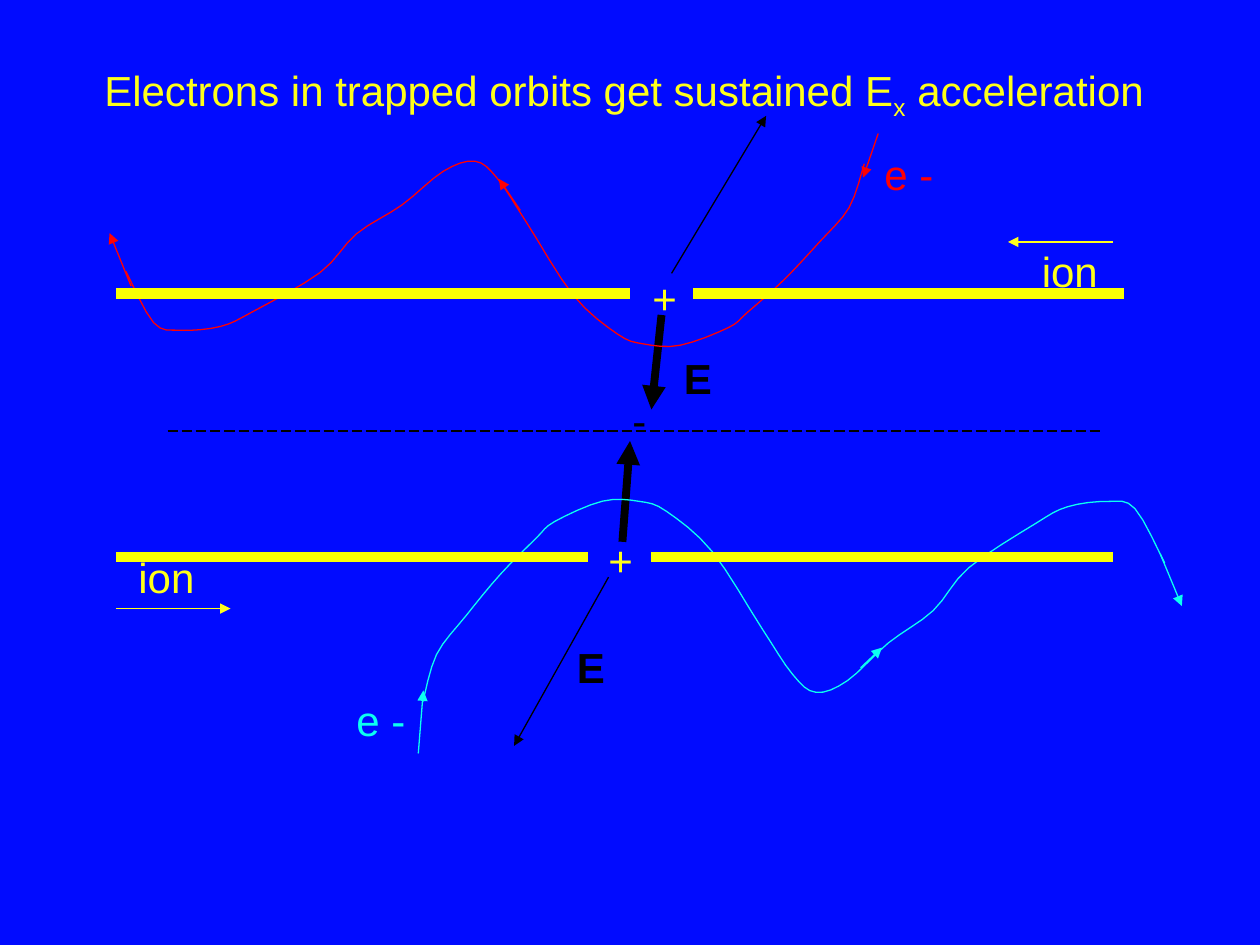
import dataclasses

import lxml.etree
import pptx
import pptx.dml.color
import pptx.enum.dml
import pptx.enum.shapes
import pptx.enum.text
import pptx.oxml.ns
import pptx.util

Inches = pptx.util.Inches
Pt = pptx.util.Pt


@dataclasses.dataclass(frozen=True)
class Theme:
    background: str = "010BFF"
    label: str = "FFFF1A"
    sheet: str = "F9FF04"
    field: str = "000000"
    upper_electron: str = "FF0003"
    lower_electron: str = "0CFFF0"
    font: str = "Arial"
    text_size: float = 24
    thin: float = 0.75
    field_width: float = 4.5
    sheet_width: float = 6


THEME = Theme()

ORBIT = [
    (6.86, 1.3), (6.74, 1.65), (6.5, 1.93), (6.22, 2.23), (5.93, 2.49), (5.78, 2.61),
    (5.4, 2.75), (5.11, 2.74), (4.9, 2.66), (4.55, 2.35), (4.18, 1.77), (3.95, 1.42),
    (3.77, 1.28), (3.52, 1.36), (3.19, 1.63), (2.83, 1.86), (2.54, 2.17), (2.01, 2.48),
    (1.75, 2.6), (1.43, 2.63), (1.22, 2.57), (1, 2.16),
]


def rgb(color):
    return pptx.dml.color.RGBColor.from_string(color)


def apply_format(target, values):
    for name, value in values.items():
        setattr(target, name, value)


def smooth_curve(knots, steps=4):
    padded = [knots[0], *knots, knots[-1]]
    for before, start, end, after in zip(padded, padded[1:], padded[2:], padded[3:]):
        for step in range(1, steps + 1):
            t = step / steps
            yield tuple(
                Inches(b + t / 2 * (c - a + t * (2 * a - 5 * b + 4 * c - d
                                                 + t * (3 * (b - c) + d - a))))
                for a, b, c, d in zip(before, start, end, after))


def add_orbit(slide, color, box, rotation=0):
    start_x, start_y = ORBIT[0]
    builder = slide.shapes.build_freeform(Inches(start_x), Inches(start_y))
    builder.add_line_segments(list(smooth_curve(ORBIT)), close=False)
    orbit = builder.convert_to_shape()
    orbit.shadow.inherit = False
    orbit.fill.background()
    orbit.line.color.rgb = rgb(color)
    orbit.line.width = Pt(THEME.thin)
    left, top, width, height = map(Inches, box)
    apply_format(orbit, {"left": left, "top": top, "width": width, "height": height,
                         "rotation": rotation})


def add_line(slide, start, end, color, width=THEME.thin, dash=None):
    line = slide.shapes.add_connector(
        pptx.enum.shapes.MSO_CONNECTOR.STRAIGHT, *map(Inches, start + end))
    line.line.color.rgb = rgb(color)
    apply_format(line.line, {"width": Pt(width), "dash_style": dash})
    lxml.etree.SubElement(line._element.spPr, pptx.oxml.ns.qn("a:effectLst"))
    return line


def add_arrow(slide, start, end, color, width=THEME.thin):
    arrow = add_line(slide, start, end, color, width)
    head = lxml.etree.SubElement(arrow.line._get_or_add_ln(), pptx.oxml.ns.qn("a:tailEnd"))
    head.set("type", "triangle")


def add_label(slide, text, left, top, width, color, bold=False, subscript="", rest=""):
    label = slide.shapes.add_textbox(*map(Inches, (left, top, width, 0.5)))
    apply_format(label.text_frame, {
        "word_wrap": False,
        "auto_size": pptx.enum.text.MSO_AUTO_SIZE.SHAPE_TO_FIT_TEXT,
    })
    paragraph = label.text_frame.paragraphs[0]
    for part, baseline in ((text, 0), (subscript, -25000), (rest, 0)):
        if not part:
            continue
        run = paragraph.add_run()
        run.text = part
        apply_format(run.font, {"name": THEME.font, "size": Pt(THEME.text_size), "bold": bold})
        run.font.color.rgb = rgb(color)
        if baseline:
            run._r.get_or_add_rPr().set("baseline", str(baseline))


def add_field(slide):
    for start, end, width in (
        ((4.83, 4.58), (4.08, 5.92), THEME.thin),
        ((5.33, 2.17), (6.08, 0.92), THEME.thin),
        ((5.25, 2.5), (5.17, 3.25), THEME.field_width),
        ((4.94, 4.3), (5, 3.5), THEME.field_width),
    ):
        add_arrow(slide, start, end, THEME.field, width)
    add_label(slide, "+", 5.08, 2.11, 0.4, THEME.label)
    add_label(slide, "-", 4.92, 3.08, 0.31, THEME.field)
    add_label(slide, "+", 4.73, 4.19, 0.4, THEME.label)
    for left, top in ((5.33, 2.75), (4.48, 5.04)):
        add_label(slide, "E", left, top, 0.42, THEME.field, bold=True)


def add_sheets(slide):
    add_line(slide, (1.33, 3.42), (8.75, 3.42), THEME.field,
             dash=pptx.enum.dml.MSO_LINE.LONG_DASH)
    for left, right, height in ((0.92, 4.67, 4.42), (5.17, 8.83, 4.42),
                                (0.92, 5, 2.33), (5.5, 8.92, 2.33)):
        add_line(slide, (left, height), (right, height), THEME.sheet, THEME.sheet_width)


def add_electron_directions(slide):
    for color, arrows in (
        (THEME.upper_electron, (((6.97, 1.06), (6.85, 1.41)), ((1.04, 2.27), (0.87, 1.85)),
                                ((4.13, 1.67), (3.96, 1.42)))),
        (THEME.lower_electron, (((3.32, 5.98), (3.36, 5.48)), ((9.21, 4.4), (9.38, 4.81)),
                                ((6.83, 5.3), (7, 5.14)))),
    ):
        for start, end in arrows:
            add_arrow(slide, start, end, color)
    add_label(slide, "e -", 2.73, 5.46, 0.59, THEME.lower_electron)
    add_label(slide, "e -", 6.92, 1.13, 0.59, THEME.upper_electron)


def add_ions(slide):
    add_arrow(slide, (8.83, 1.92), (8, 1.92), THEME.label)
    add_arrow(slide, (0.92, 4.83), (1.83, 4.83), THEME.label)
    for left, top in ((8.17, 1.9), (1, 4.33)):
        add_label(slide, "ion", left, top, 0.65, THEME.label)


def main():
    deck = pptx.Presentation()
    apply_format(deck, {"slide_width": Inches(10), "slide_height": Inches(7.5)})
    slide = deck.slides.add_slide(deck.slide_layouts[6])
    slide.background.fill.solid()
    slide.background.fill.fore_color.rgb = rgb(THEME.background)
    add_field(slide)
    add_orbit(slide, THEME.upper_electron, (1, 1.28, 5.86, 1.47))
    add_orbit(slide, THEME.lower_electron, (3.33, 3.92, 5.92, 1.58), rotation=178.2)
    add_sheets(slide)
    add_electron_directions(slide)
    add_label(slide, "Electrons in trapped orbits get sustained E", 0.73, 0.46, 8.56,
              THEME.label, subscript="x", rest=" acceleration")
    add_ions(slide)
    deck.save("out.pptx")


if __name__ == "__main__":
    main()
